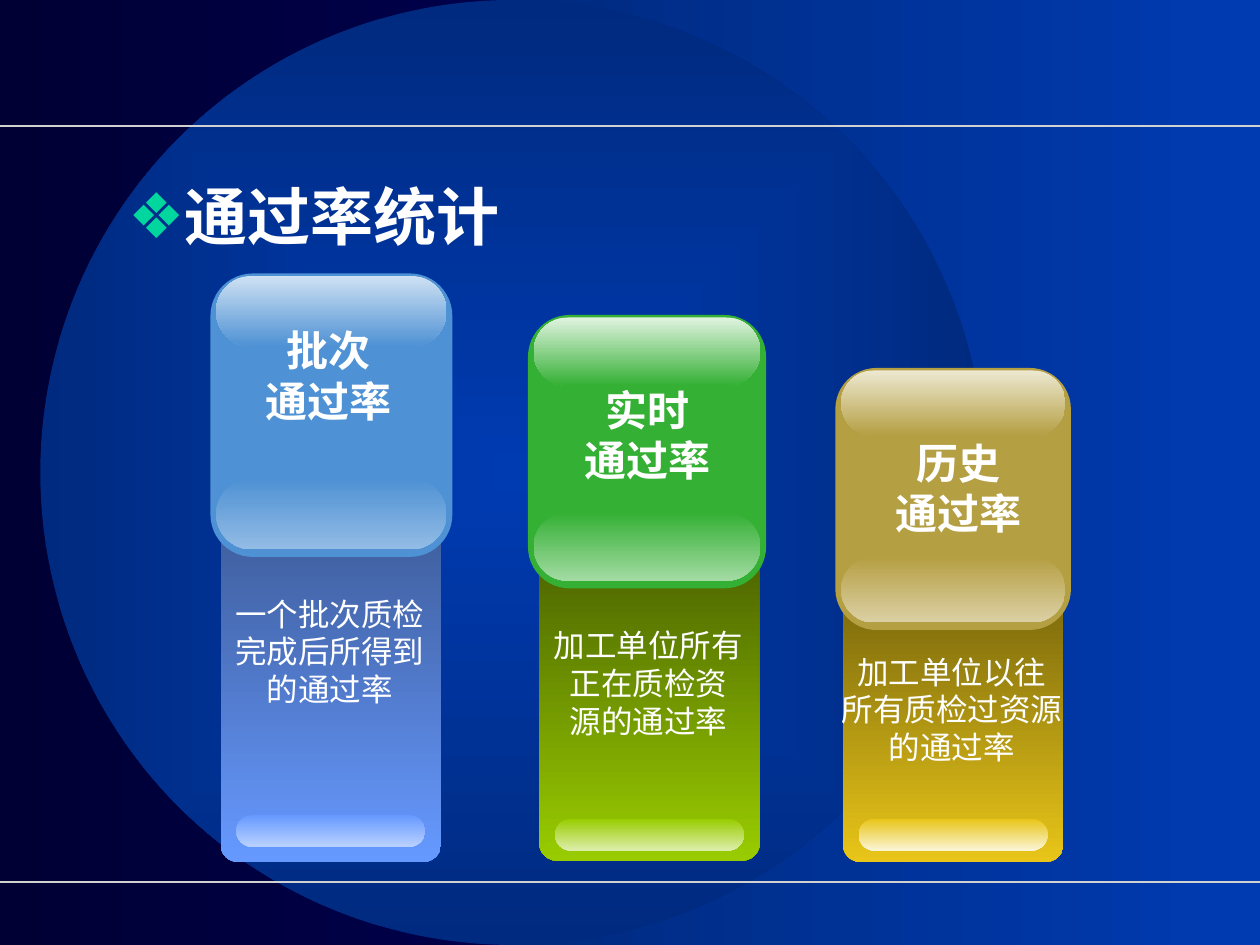
from pptx import Presentation
from pptx.dml.color import RGBColor
from pptx.enum.shapes import MSO_CONNECTOR, MSO_SHAPE
from pptx.enum.text import MSO_ANCHOR, MSO_AUTO_SIZE, PP_ALIGN
from pptx.oxml.ns import qn
from pptx.util import Inches, Pt
from lxml import etree

RECT, ROUND, OVAL = MSO_SHAPE.RECTANGLE, MSO_SHAPE.ROUNDED_RECTANGLE, MSO_SHAPE.OVAL
LINE = MSO_CONNECTOR.STRAIGHT
TOP = MSO_ANCHOR.TOP
GROW, FIXED = MSO_AUTO_SIZE.SHAPE_TO_FIT_TEXT, MSO_AUTO_SIZE.NONE
LEFT, CENTER = PP_ALIGN.LEFT, PP_ALIGN.CENTER

FONT = "Arial"
WHITE = RGBColor(0xFF, 0xFF, 0xFF)
RULE = RGBColor(0xD1, 0xD1, 0xD1)
MINT = RGBColor(0x00, 0xD6, 0x9E)
NIGHT = (RGBColor(0x00, 0x00, 0x35), RGBColor(0x00, 0x00, 0x72))
NAVY, ROYAL = RGBColor(0x00, 0x2A, 0x7F), RGBColor(0x00, 0x3B, 0xB2)

BLUE = {
    "post": (RGBColor(0x3B, 0x58, 0x93), RGBColor(0x66, 0x99, 0xFF)),
    "cap": RGBColor(0x4E, 0x91, 0xD4),
    "shine": RGBColor(0xCE, 0xE1, 0xF3),
    "glow": RGBColor(0x93, 0xBC, 0xE5),
    "foot": RGBColor(0xB9, 0xD1, 0xFF),
}
GREEN = {
    "post": (RGBColor(0x47, 0x5E, 0x00), RGBColor(0x99, 0xCC, 0x00)),
    "cap": RGBColor(0x34, 0xB0, 0x34),
    "shine": RGBColor(0xE0, 0xF3, 0xE0),
    "glow": RGBColor(0xA3, 0xDB, 0xA3),
    "foot": RGBColor(0xDD, 0xEE, 0xAA),
}
GOLD = {
    "post": (RGBColor(0x6B, 0x5B, 0x0B), RGBColor(0xE8, 0xC5, 0x18)),
    "cap": RGBColor(0xB5, 0x9F, 0x43),
    "shine": RGBColor(0xED, 0xE8, 0xD1),
    "glow": RGBColor(0xDB, 0xD0, 0xA4),
    "foot": RGBColor(0xFB, 0xF5, 0xD5),
}

COLUMNS = [
    {"post": (1.75, 3.92, 1.75, 2.92), "cap": (1.67, 2.17, 1.92, 2.25), "foot": 6.47,
     "label": "批次\n通过率", "spot": (2.61, 2.53),
     "note": "一个批次质检\n完成后所得到\n的通过率", "drop": 0.25, "wide": 1.72, "tint": BLUE},
    {"post": (6.69, 4.42, 1.75, 2.42), "cap": (6.63, 2.92, 1.87, 2.08), "foot": 6.5,
     "label": "历史\n通过率", "spot": (7.61, 3.42),
     "note": "加工单位以往\n所有质检过资源\n的通过率", "drop": 0.13, "wide": 1.97, "tint": GOLD},
    {"post": (4.28, 4.25, 1.75, 2.58), "cap": (4.19, 2.5, 1.89, 2.17), "foot": 6.5,
     "label": "实时\n通过率", "spot": (5.14, 3),
     "note": "加工单位所有\n正在质检资\n源的通过率", "drop": 0.25, "wide": 1.72, "tint": GREEN},
]


def blend(fill, pair, angle):
    fill.gradient()
    fill.gradient_angle = angle
    for stop, color in zip(fill.gradient_stops, pair):
        stop.color.rgb = color


def block(shapes, kind, box, paint, curve=None, angle=270):
    shape = shapes.add_shape(kind, *map(Inches, box))
    shape.shadow.inherit = False
    shape.line.fill.background()
    if curve is not None:
        shape.adjustments[0] = curve
    if isinstance(paint, RGBColor):
        shape.fill.solid()
        shape.fill.fore_color.rgb = paint
    else:
        blend(shape.fill, paint, angle)
    return shape


def write(frame, text, size=18, bold=False, align=CENTER, wrap=False, fit=GROW):
    frame.text = text
    frame.word_wrap = wrap
    frame.auto_size = fit
    frame.vertical_anchor = TOP
    for para in frame.paragraphs:
        para.alignment = align
        for run in para.runs:
            run.font.name = FONT
            run.font.size = Pt(size)
            run.font.bold = bold
            run.font.color.rgb = WHITE


def radial(shape):
    grad = shape._element.spPr.find(qn("a:gradFill"))
    grad.remove(grad.find(qn("a:lin")))
    path = etree.SubElement(grad, qn("a:path"), path="shape")
    etree.SubElement(path, qn("a:fillToRect"), l="50000", t="50000", r="50000", b="50000")


def rule(shapes, y):
    line = shapes.add_connector(LINE, 0, Inches(y), Inches(10), Inches(y))
    line.line.color.rgb = RULE
    line.line.width = Pt(1)
    etree.SubElement(line._element.spPr, qn("a:effectLst"))


def backdrop(slide):
    blend(slide.background.fill, NIGHT, 0)
    block(slide.shapes, RECT, (4.08, 0, 5.92, 7.5), (NAVY, ROYAL), angle=0)
    radial(block(slide.shapes, OVAL, (0.32, 0, 7.5, 7.5), (ROYAL, NAVY)))
    for y in (1, 7):
        rule(slide.shapes, y)


def heading(slide, box, text):
    slide.shapes.title._element.getparent().remove(slide.shapes.title._element)
    body = slide.placeholders[1]
    body.left, body.top, body.width, body.height = map(Inches, box)
    slide.shapes._spTree.append(body._element)
    write(body.text_frame, text, size=36, bold=True, align=LEFT, wrap=True, fit=FIXED)
    para = body.text_frame.paragraphs[0]
    props = para._p.get_or_add_pPr()
    props.set("marL", str(Inches(0.38)))
    props.set("indent", str(Inches(-0.38)))
    tint = etree.SubElement(props, qn("a:buClr"))
    etree.SubElement(tint, qn("a:srgbClr"), val=str(MINT))
    etree.SubElement(props, qn("a:buChar"), char="❖")
    para.line_spacing = 0.9
    para.space_before = Pt(0)


def caption(shapes, mid, top, wide, high, text, **style):
    box = (mid - wide / 2, top, wide, high)
    write(shapes.add_textbox(*map(Inches, box)).text_frame, text, **style)


def column(slide, post, cap, foot, label, spot, note, drop, wide, tint):
    shapes = slide.shapes.add_group_shape().shapes
    x, y, w, h = cap
    gloss = h / 4
    side, span = x + 0.045, w - 0.09
    mid = post[0] + post[2] / 2
    base = tint["cap"]
    block(shapes, ROUND, post, tint["post"], 0.079)
    block(shapes, ROUND, cap, base, 0.175)
    block(shapes, ROUND, (side, y + h - gloss - 0.06, span, gloss), (base, tint["glow"]), 0.5)
    block(shapes, ROUND, (side, y + 0.02, span, gloss), (tint["shine"], base), 0.5)
    block(shapes, ROUND, (mid - 0.75, foot, 1.5, 0.25), (tint["post"][1], tint["foot"]), 0.5)
    caption(shapes, mid - 0.01, y + h + drop, wide, 1.01, note)
    caption(shapes, *spot, 1.22, 0.91, label, size=24, bold=True)


def main():
    deck = Presentation()
    deck.slide_width, deck.slide_height = Inches(10), Inches(7.5)
    slide = deck.slides.add_slide(deck.slide_layouts[1])
    backdrop(slide)
    heading(slide, (0.92, 1.43, 8.5, 5.66), "通过率统计")
    for item in COLUMNS:
        column(slide, **item)
    deck.save("out.pptx")


if __name__ == "__main__":
    main()
